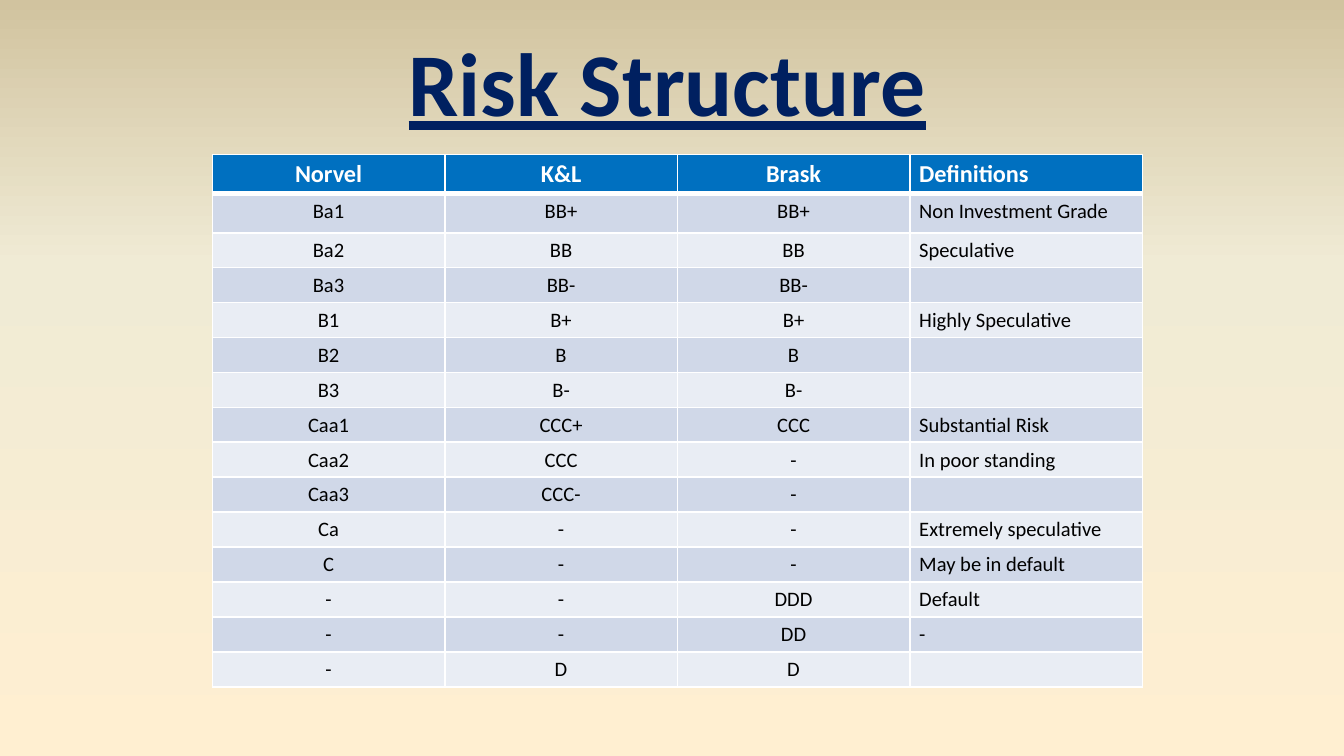
"""Build the Risk Structure slide with its table of credit rating grades."""
import typing

import pptx
import pptx.dml.color
import pptx.enum.text
import pptx.oxml
import pptx.oxml.ns
import pptx.util
from copy import deepcopy
from pptx.util import Inches

FONT = "Calibri"
ALIGN = pptx.enum.text.PP_ALIGN


class RowStyle(typing.NamedTuple):
    height: float
    size: int
    fill: str
    color: str
    bold: bool
    top: int
    bottom: int


class Grade(typing.NamedTuple):
    first: str
    second: str
    third: str
    definition: str = ""


HEADER = Grade("Norvel", "K&L", "Brask", "Definitions")
GRADES = [
    Grade("Ba1", "BB+", "BB+", "Non Investment Grade"),
    Grade("Ba2", "BB", "BB", "Speculative"),
    Grade("Ba3", "BB-", "BB-"),
    Grade("B1", "B+", "B+", "Highly Speculative"),
    Grade("B2", "B", "B"),
    Grade("B3", "B-", "B-"),
    Grade("Caa1", "CCC+", "CCC", "Substantial Risk"),
    Grade("Caa2", "CCC", "-", "In poor standing"),
    Grade("Caa3", "CCC-", "-"),
    Grade("Ca", "-", "-", "Extremely speculative"),
    Grade("C", "-", "-", "May be in default"),
    Grade("-", "-", "DDD", "Default"),
    Grade("-", "-", "DD", "-"),
    Grade("-", "D", "D"),
]
BACKGROUND = [(0, "FFEFD1"), (0.65, "F0EBD5"), (1, "D1C39F")]


def rgb(value: str) -> pptx.dml.color.RGBColor:
    return pptx.dml.color.RGBColor.from_string(value)


def row_style(row: int) -> RowStyle:
    if row == 0:
        return RowStyle(0.29, 13, "0070C0", "FFFFFF", True, 1, 3)
    height, top = (0.29, 3) if row == 1 else (0.26, 1)
    fill = "D0D8E8" if row % 2 else "E9EDF4"
    return RowStyle(height, 11, fill, "000000", False, top, 1)


def set_font(p, size: int, color: str, bold: bool) -> None:
    p.font.name = FONT
    p.font.size = pptx.util.Pt(size)
    p.font.bold = bold
    p.font.color.rgb = rgb(color)


def draw_background(s) -> None:
    fill = s.background.fill
    fill.gradient()
    fill.gradient_angle = 90
    stops = next(s.element.iter(pptx.oxml.ns.qn("a:gsLst")))
    stops.append(deepcopy(stops[-1]))
    for stop, (position, color) in zip(fill.gradient_stops, BACKGROUND):
        stop.position = position
        stop.color.rgb = rgb(color)


def draw_title(s, text: str) -> None:
    sp = s.shapes.add_textbox(Inches(2.92), Inches(0.15), Inches(4.09), Inches(0.91))
    tf = sp.text_frame
    tf.word_wrap = False
    tf.auto_size = pptx.enum.text.MSO_AUTO_SIZE.SHAPE_TO_FIT_TEXT
    p = tf.paragraphs[0]
    p.text = text
    p.alignment = ALIGN.CENTER
    set_font(p, 48, "002060", True)
    p.font.underline = True


def set_borders(cell, top: int, bottom: int) -> None:
    tc_pr = cell._tc.get_or_add_tcPr()
    for side, width in (("L", 1), ("R", 1), ("T", top), ("B", bottom)):
        tc_pr.append(pptx.oxml.parse_xml(
            f'<a:ln{side} {pptx.oxml.ns.nsdecls("a")} w="{pptx.util.Pt(width)}">'
            f'<a:solidFill><a:srgbClr val="FFFFFF"/></a:solidFill></a:ln{side}>'))


def fill_cell(cell, text: str, style: RowStyle, align: ALIGN) -> None:
    set_borders(cell, style.top, style.bottom)
    cell.fill.solid()
    cell.fill.fore_color.rgb = rgb(style.fill)
    cell.margin_left = cell.margin_right = Inches(0.07)
    cell.margin_top = cell.margin_bottom = Inches(0.15) // 4
    p = cell.text_frame.paragraphs[0]
    p.alignment = align
    set_font(p, style.size, style.color, style.bold)
    if text:
        p.text = text
    else:
        p._p.get_or_add_endParaRPr().set("sz", str(style.size * 100))


def draw_table(s, grades: list[Grade]) -> None:
    columns = len(Grade._fields)
    table = s.shapes.add_table(len(grades), columns, Inches(1.58), Inches(1.15),
                               Inches(6.92), Inches(3.96)).table
    table.first_row = table.horz_banding = False
    for row, grade in enumerate(grades):
        style = row_style(row)
        table.rows[row].height = Inches(style.height)
        for column, text in enumerate(grade):
            align = ALIGN.LEFT if column == columns - 1 else ALIGN.CENTER
            fill_cell(table.cell(row, column), text, style, align)


def main() -> None:
    prs = pptx.Presentation()
    prs.slide_width = Inches(10)
    prs.slide_height = prs.slide_width * 9 // 16
    s = prs.slides.add_slide(prs.slide_layouts[6])
    draw_background(s)
    draw_title(s, "Risk Structure")
    draw_table(s, [HEADER, *GRADES])
    prs.save("out.pptx")


if __name__ == "__main__":
    main()
